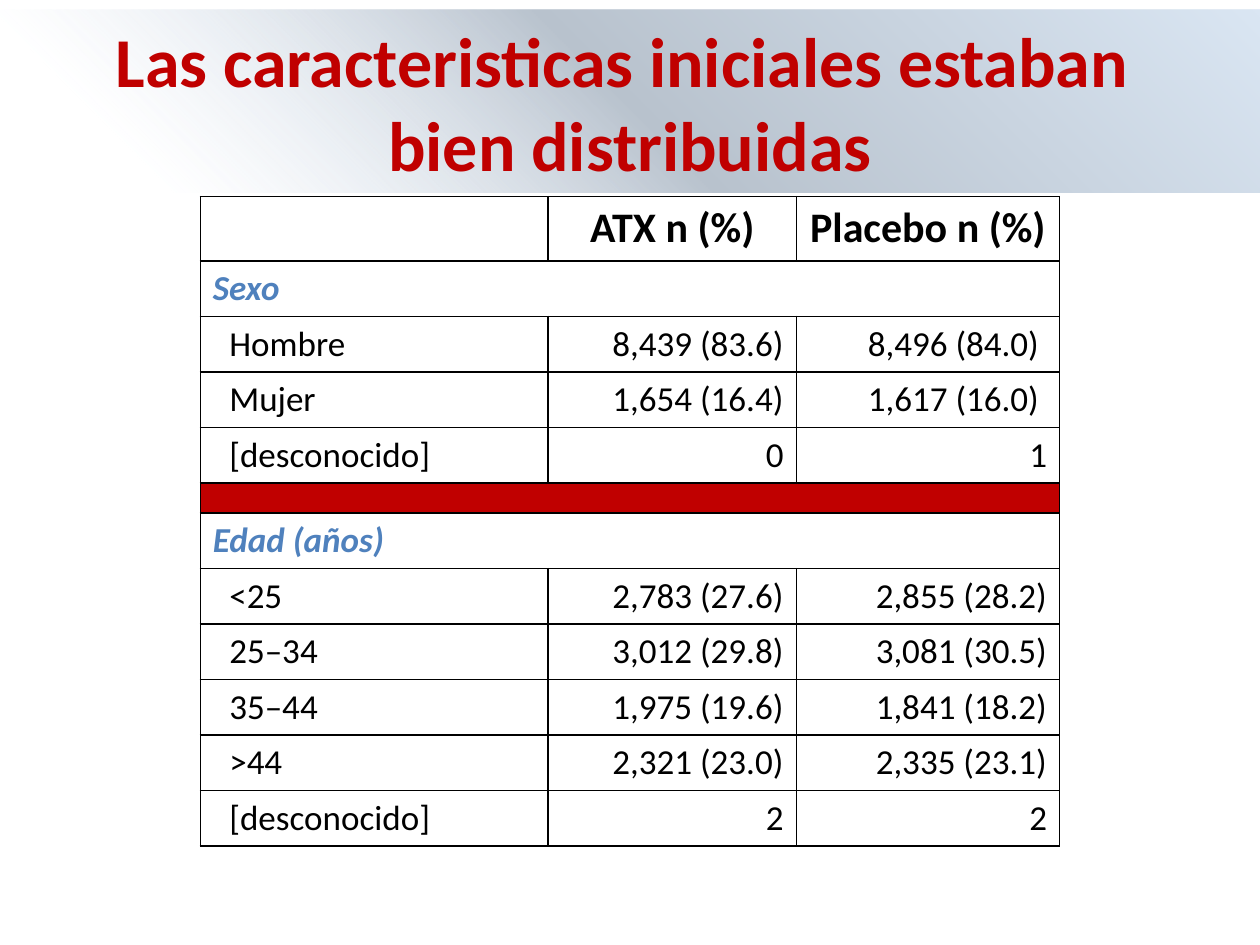
from lxml import etree
from pptx import Presentation
from pptx.dml.color import RGBColor
from pptx.enum import shapes, text
from pptx.oxml import parse_xml
from pptx.oxml.ns import nsdecls, qn
from pptx.util import Inches, Pt

BLACK = RGBColor(0x00, 0x00, 0x00)
RED = RGBColor(0xC0, 0x00, 0x00)
BLUE = RGBColor(0x4F, 0x81, 0xBD)
FONT = "Calibri"

TITLE = "Las caracteristicas iniciales estaban \vbien distribuidas"
BANNER_STOPS = [(12, "DCE6F2", 0), (50, "B8C2CD", 100), (100, "DAE6F3", 100)]
ROWS = [
    ("header", "", "ATX n (%)", "Placebo n (%)"),
    ("section", "Sexo"),
    ("data", "Hombre", "8,439 (83.6)", "8,496 (84.0) "),
    ("data", "Mujer", "1,654 (16.4)", "1,617 (16.0) "),
    ("data", "[desconocido]", "0", "1"),
    ("divider",),
    ("section", "Edad (años)"),
    ("data", "<25", "2,783 (27.6)", "2,855 (28.2)"),
    ("data", "25–34", "3,012 (29.8)", "3,081 (30.5)"),
    ("data", "35–44", "1,975 (19.6)", "1,841 (18.2)"),
    ("data", ">44", "2,321 (23.0)", "2,335 (23.1)"),
    ("data", "[desconocido]", "2", "2"),
]
COLUMN_WIDTHS = [2.76, 1.97, 2.09]
ROW_HEIGHTS = {"header": 0.51, "section": 0.44, "data": 0.44, "divider": 0.24}


def style_runs(paragraph, size, color, bold=False, italic=False):
    for run in paragraph.runs:
        font = run.font
        font.name, font.size = FONT, Pt(size)
        font.bold, font.italic = bold, italic
        font.color.rgb = color


def add_borders(cell):
    properties = cell._tc.get_or_add_tcPr()
    for side in ("lnL", "lnR", "lnT", "lnB"):
        properties.append(parse_xml(
            f'<a:{side} {nsdecls("a")} w="12700"><a:solidFill>'
            f'<a:srgbClr val="{BLACK}"/></a:solidFill></a:{side}>'))


def fill_banner(banner):
    banner.fill.gradient()
    banner.fill.gradient_angle = 45
    stops = banner._element.spPr.find(qn("a:gradFill")).find(qn("a:gsLst"))
    for stop in list(stops):
        stops.remove(stop)
    for position, color, opacity in BANNER_STOPS:
        stop = etree.SubElement(stops, qn("a:gs"), pos=str(position * 1000))
        shade = etree.SubElement(stop, qn("a:srgbClr"), val=color)
        etree.SubElement(shade, qn("a:alpha"), val=str(opacity * 1000))


def add_banner(slide):
    banner = slide.shapes.add_shape(
        shapes.MSO_SHAPE.RECTANGLE, Inches(0), Inches(0.08), Inches(10), Inches(1.45))
    banner.shadow.inherit = False
    banner.line.fill.background()
    fill_banner(banner)
    frame = banner.text_frame
    frame.word_wrap = True
    frame.vertical_anchor = text.MSO_ANCHOR.MIDDLE
    heading = frame.paragraphs[0]
    heading.text = TITLE
    heading.alignment = text.PP_ALIGN.CENTER
    style_runs(heading, 40, RED, bold=True)


def write_cell(cell, kind, column, wording):
    cell.text = wording
    cell.vertical_anchor = text.MSO_ANCHOR.MIDDLE
    paragraph = cell.text_frame.paragraphs[0]
    if kind == "header":
        paragraph.alignment = text.PP_ALIGN.CENTER
        style_runs(paragraph, 24, BLACK, bold=True)
    elif kind == "section":
        style_runs(paragraph, 20, BLUE, bold=True, italic=True)
    elif kind == "data":
        style_runs(paragraph, 20, BLACK)
        if column:
            paragraph.alignment = text.PP_ALIGN.RIGHT
        else:
            cell.margin_left = Inches(0.23)


def add_characteristics(slide):
    heights = [ROW_HEIGHTS[row[0]] for row in ROWS]
    table = slide.shapes.add_table(
        len(ROWS), len(COLUMN_WIDTHS), Inches(1.59), Inches(1.56),
        Inches(sum(COLUMN_WIDTHS)), Inches(sum(heights))).table
    table.first_row = table.horz_banding = False
    for column, width in zip(table.columns, COLUMN_WIDTHS):
        column.width = Inches(width)
    for r, ((kind, *wordings), height) in enumerate(zip(ROWS, heights)):
        table.rows[r].height = Inches(height)
        for c in range(len(COLUMN_WIDTHS)):
            cell = table.cell(r, c)
            add_borders(cell)
            if kind == "divider":
                cell.fill.solid()
                cell.fill.fore_color.rgb = RED
                cell.margin_top = cell.margin_bottom = 0
                ending = cell.text_frame.paragraphs[0]._p.get_or_add_endParaRPr()
                ending.set("sz", "800")
            else:
                cell.fill.background()
        for c, wording in enumerate(wordings):
            write_cell(table.cell(r, c), kind, c, wording)
        if kind in ("section", "divider"):
            table.cell(r, 0).merge(table.cell(r, len(COLUMN_WIDTHS) - 1))


def main():
    presentation = Presentation()
    presentation.slide_width, presentation.slide_height = Inches(10), Inches(7.5)
    slide = presentation.slides.add_slide(presentation.slide_layouts[6])
    add_characteristics(slide)
    add_banner(slide)
    presentation.save("out.pptx")


if __name__ == "__main__":
    main()
